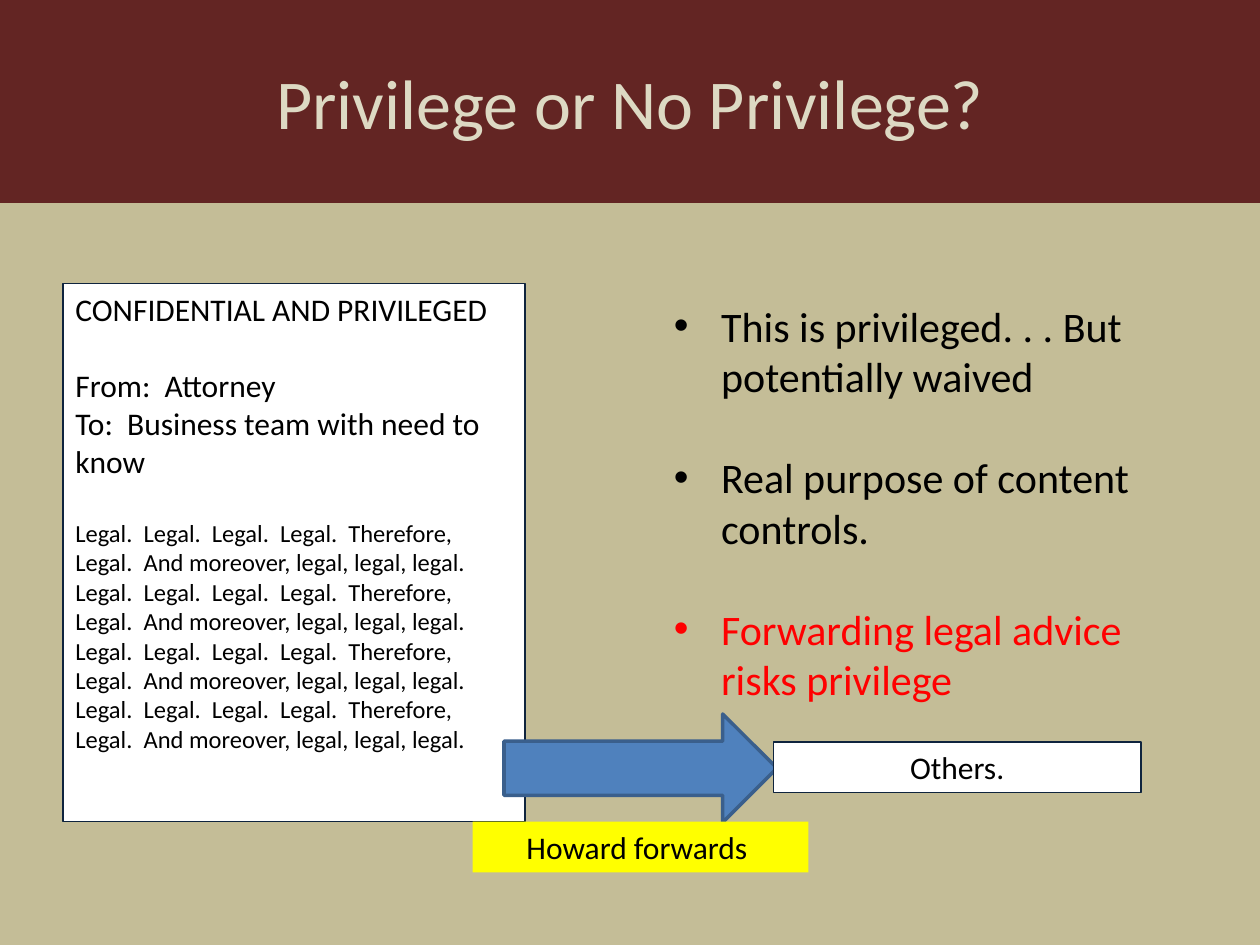
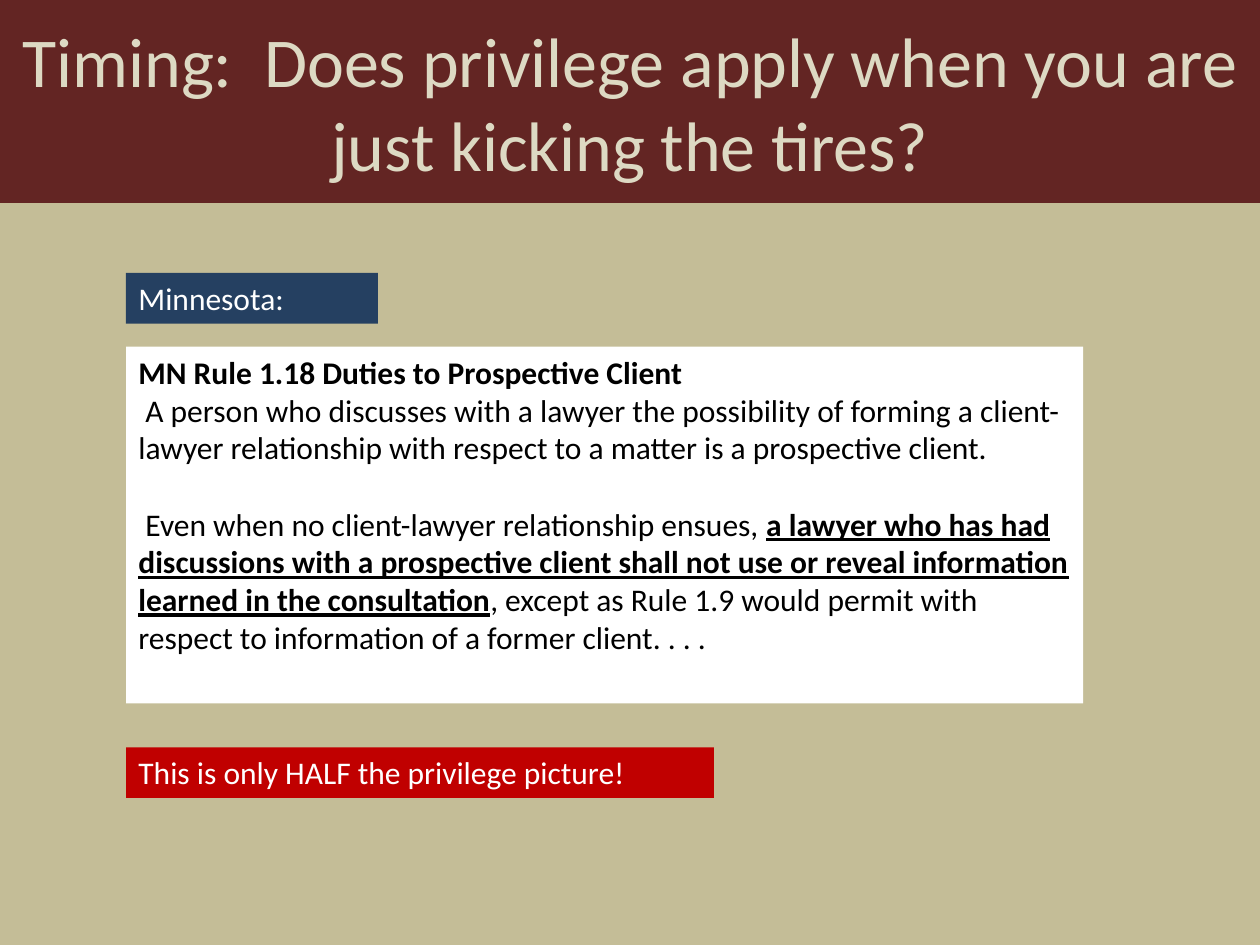
"""Builds two slides on attorney-client privilege."""
from lxml.etree import SubElement
from pptx import Presentation
from pptx.dml.color import RGBColor
from pptx.enum.shapes import MSO_SHAPE as SHAPE
from pptx.enum.text import MSO_ANCHOR as ANCHOR, MSO_AUTO_SIZE as AUTO, PP_ALIGN as ALIGN
from pptx.oxml.ns import qn
from pptx.util import Pt

FONT = "Calibri"
TAN = RGBColor(0xC4, 0xBD, 0x97)
MAROON = RGBColor(0x63, 0x25, 0x23)
CREAM = RGBColor(0xDD, 0xD9, 0xC3)
NAVY = RGBColor(0x0F, 0x24, 0x3E)
DARK_BLUE = RGBColor(0x25, 0x40, 0x61)
BLUE = RGBColor(0x4F, 0x81, 0xBD)
BLUE_EDGE = RGBColor(0x3A, 0x5F, 0x8C)
YELLOW = RGBColor(0xFF, 0xFF, 0x00)
RED = RGBColor(0xFF, 0x00, 0x00)
DARK_RED = RGBColor(0xC0, 0x00, 0x00)
WHITE = RGBColor(0xFF, 0xFF, 0xFF)
BLACK = RGBColor(0x00, 0x00, 0x00)
BODY, LINE = 18, 22


def write(sp, lines, size=BODY, color=BLACK, align=ALIGN.LEFT, anchor=ANCHOR.TOP):
    tf = sp.text_frame
    tf.text = "\n".join(lines)
    tf.word_wrap = True
    tf.auto_size = AUTO.NONE
    tf.vertical_anchor = anchor
    for p in tf.paragraphs:
        p.alignment = align
        for r in p.runs:
            r.font.name, r.font.size = FONT, Pt(size)
            r.font.color.rgb = color
    return tf.paragraphs


def add_box(s, box, fill, edge=None, width=0.75, shape=SHAPE.RECTANGLE):
    sp = s.shapes.add_shape(shape, *[Pt(v) for v in box])
    sp.shadow.inherit = False
    sp.fill.solid()
    sp.fill.fore_color.rgb = fill
    if edge is None:
        sp.line.fill.background()
    else:
        sp.line.color.rgb = edge
        sp.line.width = Pt(width)
    return sp


prs = Presentation()
prs.slide_width, prs.slide_height = Pt(720), Pt(540)

slides = []
for title in ("Privilege or No Privilege?",
              "Timing:  Does privilege apply when you are just kicking the tires?"):
    s = prs.slides.add_slide(prs.slide_layouts[5])
    s.background.fill.solid()
    s.background.fill.fore_color.rgb = TAN
    sp = s.shapes.title
    sp.left, sp.top, sp.width, sp.height = Pt(0), Pt(0), Pt(720), Pt(116)
    sp.fill.solid()
    sp.fill.fore_color.rgb = MAROON
    write(sp, [title], 40, CREAM, ALIGN.CENTER, ANCHOR.MIDDLE)
    slides.append(s)
forwarding, timing = slides

memo = add_box(forwarding, (36, 162, 264, 307.5), WHITE, NAVY)
legal = "Legal.  Legal.  Legal.  Legal.  Therefore, Legal.  And moreover, legal, legal, legal."
paragraphs = write(memo, ["CONFIDENTIAL AND PRIVILEGED", "From:  Attorney",
                          "To:  Business team with need to know"] + [legal] * 4)
for p in paragraphs[3:]:
    p.runs[0].font.size = Pt(14)
for p in (paragraphs[1], paragraphs[3]):
    p.space_before = Pt(LINE)

points = forwarding.shapes.add_textbox(Pt(378), Pt(168), Pt(288), Pt(240))
paragraphs = write(points, ["This is privileged. . . But potentially waived",
                            "Real purpose of content controls.",
                            "Forwarding legal advice risks privilege"], 24)
for p in paragraphs:
    pPr = p._p.get_or_add_pPr()
    pPr.set("marL", str(Pt(27)))
    pPr.set("indent", str(Pt(-27)))
    SubElement(pPr, qn("a:buFont")).set("typeface", "Arial")
    SubElement(pPr, qn("a:buChar")).set("char", "•")
for p in paragraphs[1:]:
    p.space_before = Pt(29)
paragraphs[-1].runs[0].font.color.rgb = RED

add_box(forwarding, (288, 408, 156, 62), BLUE, BLUE_EDGE, 2, SHAPE.RIGHT_ARROW)
others = add_box(forwarding, (442, 424, 210, 29), WHITE, NAVY)
write(others, ["Others."], align=ALIGN.CENTER)
caption = add_box(forwarding, (270, 469.5, 192, 29), YELLOW)
write(caption, ["Howard forwards "], align=ALIGN.CENTER)

rule = add_box(timing, (72, 198, 547, 204), WHITE)
heading, definition, duty = write(rule, [
    "MN Rule 1.18 Duties to Prospective Client",
    "A person who discusses with a lawyer the possibility of forming a client-lawyer "
    "relationship with respect to a matter is a prospective client.",
    "Even when no client-lawyer relationship ensues, "])
heading.runs[0].font.bold = True
for p in (definition, duty):
    p._p.get_or_add_pPr().set("indent", str(Pt(4)))
duty.space_before = Pt(LINE)
for text, strong in (
        ("a lawyer who has had discussions with a prospective client shall not use or "
         "reveal information learned in the consultation", True),
        (", except as Rule 1.9 would permit with respect to information of a former "
         "client. . . .", False)):
    r = duty.add_run()
    r.text = text
    r.font.name, r.font.size = FONT, Pt(BODY)
    r.font.color.rgb = BLACK
    r.font.bold = r.font.underline = strong

for top, width, fill, text in (
        (156, 144, DARK_BLUE, "Minnesota:"),
        (427, 336, DARK_RED, "This is only HALF the privilege picture!")):
    write(add_box(timing, (72, top, width, 29), fill), [text], color=WHITE)

prs.save("out.pptx")
